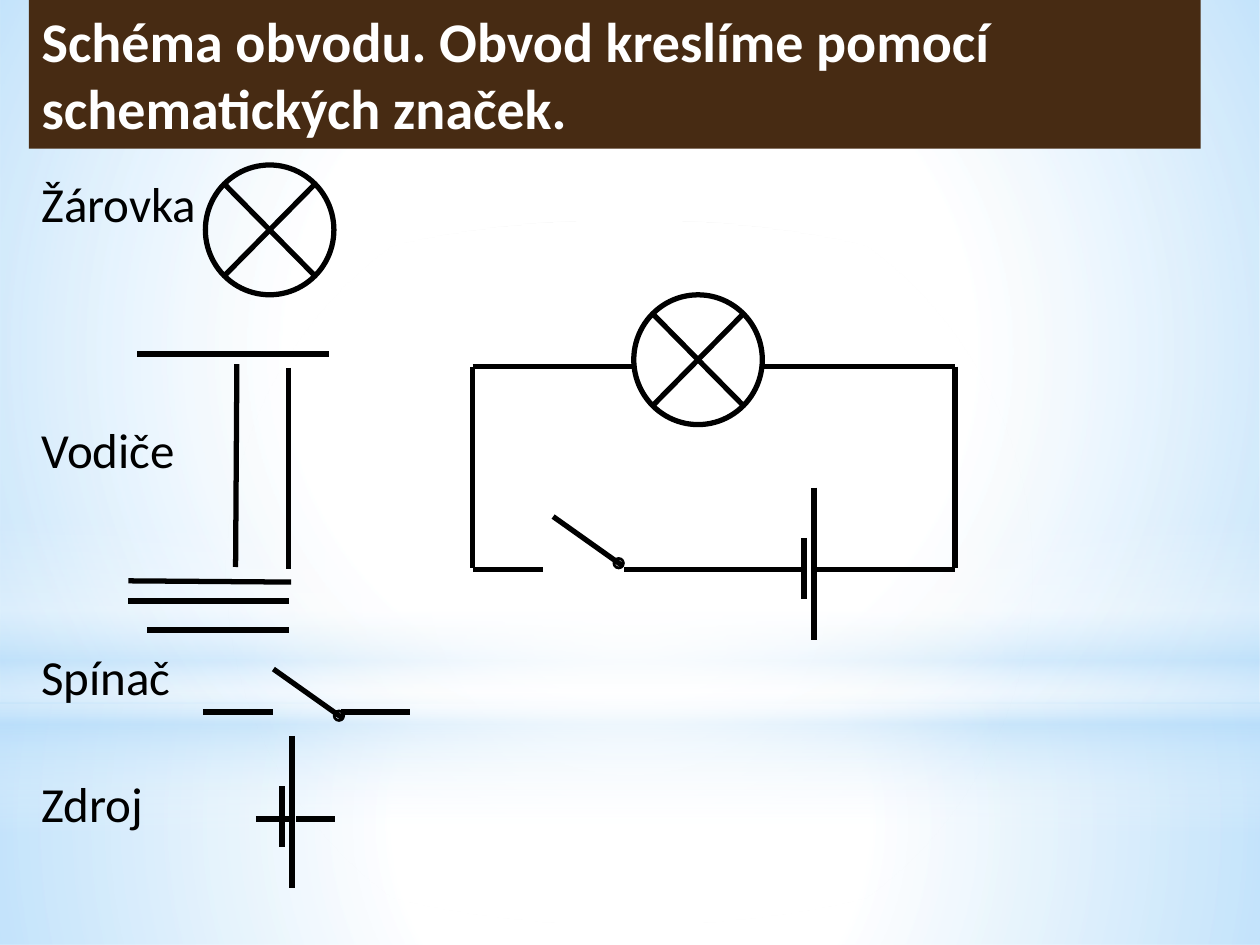
from pptx import Presentation
from pptx.dml.color import RGBColor
from pptx.enum.shapes import MSO_CONNECTOR, MSO_SHAPE
from pptx.enum.text import MSO_ANCHOR, MSO_AUTO_SIZE, PP_ALIGN
from pptx.oxml import parse_xml
from pptx.oxml.ns import nsdecls, qn
from pptx.util import Inches, Pt
from lxml import etree

BLACK = RGBColor(0x00, 0x00, 0x00)
WHITE = RGBColor(0xFF, 0xFF, 0xFF)
BROWN = RGBColor(0x47, 0x2B, 0x13)
SKY = RGBColor(0xB4, 0xDC, 0xFA)
FONT = "Calibri"

presentation = Presentation()
presentation.slide_width = Inches(10)
presentation.slide_height = Inches(7.5)
slide = presentation.slides.add_slide(presentation.slide_layouts[5])


def add_line(x1, y1, x2, y2, width=3):
    line = slide.shapes.add_connector(
        MSO_CONNECTOR.STRAIGHT, Inches(x1), Inches(y1), Inches(x2), Inches(y2))
    line.line.color.rgb = BLACK
    line.line.width = Pt(width)
    etree.SubElement(line._element.spPr, qn("a:effectLst"))


def add_shape(kind, left, top, width, height, line_width=None):
    shape = slide.shapes.add_shape(
        kind, Inches(left), Inches(top), Inches(width), Inches(height))
    shape.shadow.inherit = False
    shape.fill.background()
    if line_width:
        shape.line.color.rgb = BLACK
        shape.line.width = Pt(line_width)
    else:
        shape.line.fill.background()
    return shape


# Background glow: stops are position, colour and opacity in percent
RADIAL = ('<a:path path="circle"><a:fillToRect l="50000" t="50000" '
          'r="50000" b="50000"/></a:path>')
VERTICAL = '<a:lin ang="5400000" scaled="0"/>'
glows = [
    (MSO_SHAPE.RECTANGLE, 5.58, 1.92, RADIAL,
     [(0, WHITE, 91), (37, WHITE, 76), (100, SKY, 79)]),
    (MSO_SHAPE.RECTANGLE, 0, 5.58, RADIAL,
     [(0, WHITE, 89), (48, WHITE, 62), (100, SKY, 79)]),
    (MSO_SHAPE.RECTANGLE, 4.12, 2.5, VERTICAL,
     [(0, WHITE, 0), (29, WHITE, 30), (45, SKY, 40),
      (55, WHITE, 26), (65, SKY, 60), (100, WHITE, 0)]),
    (MSO_SHAPE.OVAL, 1.75, 5.58, RADIAL, [(0, WHITE, 100), (56, WHITE, 0)]),
]
for kind, top, height, direction, stops in glows:
    glow = add_shape(kind, 0, top, 10, height)
    stop_list = "".join(
        f'<a:gs pos="{position * 1000}"><a:srgbClr val="{color}">'
        f'<a:alpha val="{opacity * 1000}"/></a:srgbClr></a:gs>'
        for position, color, opacity in stops)
    gradient = parse_xml(
        f'<a:gradFill {nsdecls("a")} rotWithShape="1">'
        f'<a:gsLst>{stop_list}</a:gsLst>{direction}</a:gradFill>')
    properties = glow._element.spPr
    properties.replace(properties.find(qn("a:noFill")), gradient)

# Title, moved in front of the background
title = slide.shapes.title
title.left, title.top = Inches(0.23), Inches(0)
title.width, title.height = Inches(9.3), Inches(1.18)
title.fill.solid()
title.fill.fore_color.rgb = BROWN
title.text_frame.word_wrap = True
title.text_frame.auto_size = MSO_AUTO_SIZE.NONE
title.text_frame.vertical_anchor = MSO_ANCHOR.TOP
paragraph = title.text_frame.paragraphs[0]
paragraph.alignment = PP_ALIGN.LEFT
run = paragraph.add_run()
run.text = "Schéma obvodu. Obvod kreslíme pomocí schematických značek."
run.font.name = FONT
run.font.size = Pt(32)
run.font.bold = True
run.font.color.rgb = WHITE
slide.shapes._spTree.append(title._element)

# Names of the symbols
labels = [("Žárovka", 1.33, 1.62), ("Vodiče", 3.28, 1.38),
          ("Spínač", 5.08, 1.62), ("Zdroj", 6.09, 1.25)]
for text, top, width in labels:
    label = slide.shapes.add_textbox(
        Inches(0.23), Inches(top), Inches(width), Inches(0.57))
    label.text_frame.word_wrap = True
    run = label.text_frame.paragraphs[0].add_run()
    run.text = text
    run.font.name = FONT
    run.font.size = Pt(28)
    run.font.color.rgb = BLACK

# Bulbs: legend and circuit
for left, top in [(1.63, 1.31), (5.03, 2.34)]:
    add_shape(MSO_SHAPE.OVAL, left, top, 1.02, 1.03, 3)
    add_line(left + 0.87, top + 0.15, left + 0.15, top + 0.88)
    add_line(left + 0.15, top + 0.15, left + 0.87, top + 0.88)

# Switches: pivot and lever
for left, top in [(2.65, 5.64), (4.87, 4.43)]:
    pivot = add_shape(MSO_SHAPE.DONUT, left, top, 0.08, 0.08, 1.25)
    pivot.adjustments[0] = 0.055
    add_line(left - 0.48, top - 0.33, left + 0.07, top + 0.06)

# Sources: long and short plate
for x, top in [(2.32, 5.84), (6.46, 3.87)]:
    add_line(x, top, x, top + 1.21, 3.5)
    add_line(x - 0.08, top + 0.4, x - 0.08, top + 0.88, 3.5)

# Wires
wires = [
    # Legend: conductors
    (1.09, 2.81, 2.61, 2.81), (1.88, 2.89, 1.87, 4.5),
    (2.29, 2.92, 2.29, 4.52), (1.02, 4.61, 2.31, 4.62),
    (1.02, 4.77, 2.29, 4.77), (1.17, 5, 2.29, 5),
    # Legend: leads of the switch and the source
    (1.61, 5.65, 2.17, 5.65), (2.71, 5.65, 3.25, 5.65),
    (2.03, 6.5, 2.29, 6.5), (2.35, 6.5, 2.66, 6.5),
    # Circuit: top, sides, bottom
    (3.75, 2.91, 5.03, 2.91), (6.06, 2.91, 7.58, 2.91),
    (3.75, 2.91, 3.75, 4.51), (7.58, 2.91, 7.58, 4.51),
    (3.75, 4.52, 4.31, 4.52), (4.95, 4.52, 6.38, 4.52),
    (6.46, 4.52, 7.58, 4.52),
]
for wire in wires:
    add_line(*wire)

presentation.save("out.pptx")
